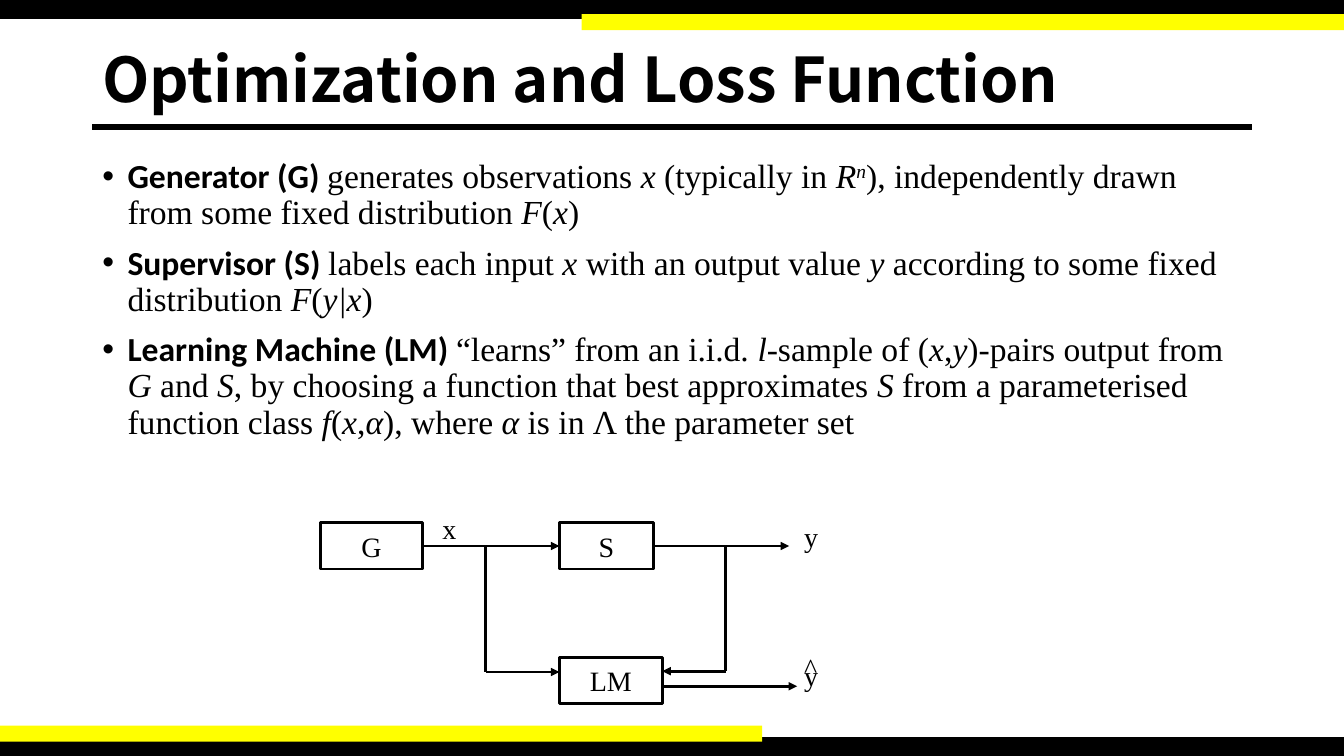
from lxml.etree import SubElement
from pptx import Presentation
from pptx.dml.color import RGBColor
from pptx.enum.shapes import MSO_CONNECTOR as Connector, MSO_SHAPE as Shape
from pptx.enum.text import MSO_ANCHOR as Anchor, PP_ALIGN as Align
from pptx.oxml.ns import qn
from pptx.util import Inches, Pt

COLUMNS, ROWS = 160, 90
BLACK, YELLOW = "000000", "FFFF00"
LEFT, RIGHT = 1, 3


def colour(value):
    return RGBColor.from_string(value)


class SlideBuilder:
    serif, sans, heading = "Times New Roman", "Calibri", "Noto Sans CJK SC"
    label_size, body_size, title_size = 20, 24, 44

    def __init__(self, presentation):
        self.slide = presentation.slides.add_slide(presentation.slide_layouts[6])
        self.column = presentation.slide_width / COLUMNS
        self.row = presentation.slide_height / ROWS

    def place(self, x, y):
        return round(x * self.column), round(y * self.row)

    def run(self, paragraph, text, size, font, bold=False, italic=False):
        run = paragraph.add_run()
        run.text = text
        run.font.size, run.font.name = Pt(size), font
        run.font.bold, run.font.italic = bold, italic
        run.font.color.rgb = colour(BLACK)
        return run

    def rectangle(self, x, y, width, height):
        shape = self.slide.shapes.add_shape(
            Shape.RECTANGLE, *self.place(x, y), *self.place(width, height))
        shape.shadow.inherit = False
        return shape

    def band(self, x, y, width, height, fill):
        shape = self.rectangle(x, y, width, height)
        shape.fill.solid()
        shape.fill.fore_color.rgb = colour(fill)
        shape.line.fill.background()

    def node(self, text, x, y, width, height=5.5):
        shape = self.rectangle(x, y, width, height)
        shape.fill.background()
        shape.line.color.rgb = colour(BLACK)
        shape.line.width = Pt(2)
        shape.text_frame.vertical_anchor = Anchor.MIDDLE
        paragraph = shape.text_frame.paragraphs[0]
        paragraph.alignment = Align.CENTER
        self.run(paragraph, text, self.label_size, self.serif)
        return shape

    def text_frame(self, x, y, width, height, wrap=True):
        box = self.slide.shapes.add_textbox(*self.place(x, y), *self.place(width, height))
        box.text_frame.word_wrap = wrap
        return box.text_frame

    def label(self, text, x, y):
        frame = self.text_frame(x, y, 4.1, 5.15, wrap=False)
        self.run(frame.paragraphs[0], text, self.label_size, self.serif)

    def title(self, text, *area):
        frame = self.text_frame(*area)
        frame.vertical_anchor = Anchor.MIDDLE
        paragraph = frame.paragraphs[0]
        paragraph.line_spacing = 0.9
        self.run(paragraph, text, self.title_size, self.heading, bold=True)

    def bullets(self, items, *area):
        frame = self.text_frame(*area)
        for index, (term, definition) in enumerate(items):
            paragraph = frame.add_paragraph() if index else frame.paragraphs[0]
            paragraph.line_spacing = 0.9
            paragraph.space_before = Pt(10)
            properties = paragraph._p.get_or_add_pPr()
            properties.set("marL", str(Inches(0.25)))
            properties.set("indent", str(-Inches(0.25)))
            SubElement(properties, qn("a:buFont")).set("typeface", "Arial")
            SubElement(properties, qn("a:buChar")).set("char", "•")
            self.run(paragraph, term, self.body_size, self.sans, bold=True)
            self.definition(paragraph, definition)

    def definition(self, paragraph, text):
        for index, piece in enumerate(text.split("_")):
            if piece:
                run = self.run(paragraph, piece.lstrip("^"), self.body_size,
                               self.serif, italic=index % 2 == 1)
                if piece.startswith("^"):
                    run.font._element.set("baseline", "30000")

    def line(self, start, end, width=2, arrow=False, source=None, target=None):
        connector = self.slide.shapes.add_connector(
            Connector.STRAIGHT, *self.place(*start), *self.place(*end))
        connector.line.color.rgb = colour(BLACK)
        connector.line.width = Pt(width)
        if source is not None:
            connector.begin_connect(source, RIGHT)
        if target is not None:
            connector.end_connect(target, LEFT)
        if arrow:
            SubElement(connector.line._get_or_add_ln(), qn("a:tailEnd")).set("type", "triangle")
        SubElement(connector._element.spPr, qn("a:effectLst"))


DEFINITIONS = [
    ("Generator (G) ",
     "generates observations _x_ (typically in _R__^n_), independently drawn "
     "from some fixed distribution _F_(_x_)"),
    ("Supervisor (S) ",
     "labels each input _x_ with an output value _y_ according to some fixed "
     "distribution _F_(_y|x_)"),
    ("Learning Machine (LM) ",
     "“learns” from an i.i.d. _l_-sample of (_x_,_y_)-pairs output from _G_ and _S_, "
     "by choosing a function that best approximates _S_ from a parameterised "
     "function class _f_(_x_,_α_), where _α_ is in Λ the parameter set"),
]


def main():
    presentation = Presentation()
    presentation.slide_width, presentation.slide_height = Inches(13.33), Inches(7.5)
    builder = SlideBuilder(presentation)

    builder.band(0, 0, COLUMNS, 2.25, BLACK)
    builder.band(0, 87.75, COLUMNS, 2.25, BLACK)
    builder.band(69.25, 1.7, 90.75, 1.9, YELLOW)
    builder.band(0, 86.4, 90.75, 1.9, YELLOW)
    builder.line((11, 15.1), (149, 15.1), width=4)
    builder.title("Optimization and Loss Function", 11, 4.7, 138, 10.3)
    builder.bullets(DEFINITIONS, 11, 18.4, 138, 57)

    generator = builder.node("G", 38.15, 62.25, 12.15)
    supervisor = builder.node("S", 66.6, 62.25, 11.2)
    builder.node("LM", 66.6, 78.25, 12.25)
    for text, x, y in [("x", 51.5, 60.25), ("y", 94.55, 61.3),
                       ("y", 94.55, 77.75), ("^", 94.55, 76.8)]:
        builder.label(text, x, y)

    flow, branch, feedback = 65, 57.85, 86.4
    builder.line((50.3, flow), (66.6, flow), arrow=True, source=generator, target=supervisor)
    builder.line((77.8, flow), (93.95, flow), arrow=True, source=supervisor)
    builder.line((branch, flow), (branch, 80))
    builder.line((branch, 80), (66.6, 80), arrow=True)
    builder.line((feedback, flow), (feedback, 79.9))
    builder.line((feedback, 79.9), (78.85, 79.9), arrow=True)
    builder.line((78.85, 81.7), (94.9, 81.7), arrow=True)

    presentation.save("out.pptx")


if __name__ == "__main__":
    main()
